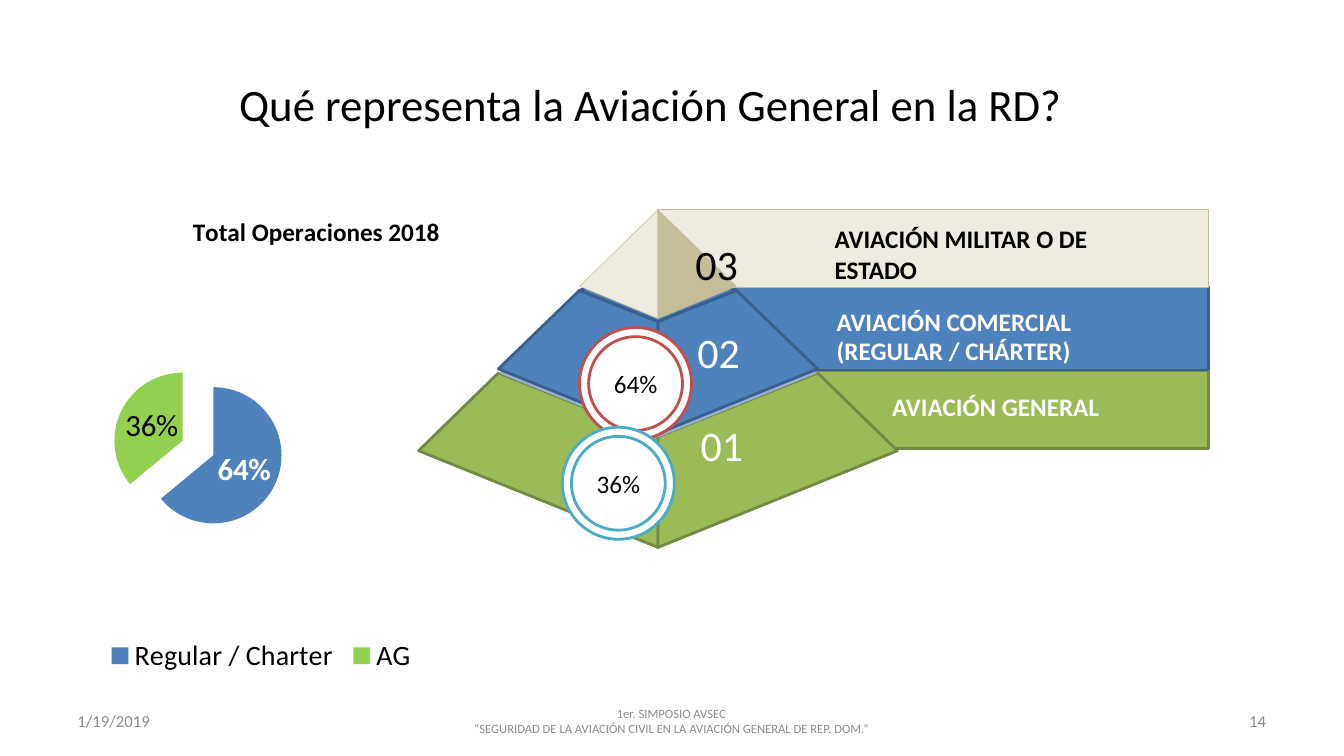
import pptx
import pptx.chart.data
import pptx.dml.color
import pptx.enum.chart
import pptx.enum.shapes
import pptx.enum.text
import pptx.oxml
import pptx.oxml.ns
import pptx.util

Pt = pptx.util.Pt
ALIGN = pptx.enum.text.PP_ALIGN
ANCHOR = pptx.enum.text.MSO_ANCHOR

# Content (lengths in points)
HEADING = "Qué representa la Aviación General en la RD?"
OPERATIONS = {"title": "Total Operaciones 2018", "series": "Series 1",
              "shares": [("Regular / Charter", 64, "blue"), ("AG", 36, "lime")]}
AXIS = 470  # vertical axis of the pyramid
# Faces and lids list (distance from the axis, y); levels run from bottom to top
LEVELS = [
    {"number": "01", "number_at": (492.5, 300.2), "ink": "white",
     "label": "AVIACIÓN GENERAL", "label_box": (622.8, 275.8, 218.9, 31), "spacing": 1,
     "banner": (469.4, 265, 393.8, 55.4), "edge": ("dark_green", 2),
     "left": "green", "right": "green",
     "face": [(171, 322), (0, 391), (0, 312), (114, 266.4)],
     "lid": (114, 266.4, 224.6, 312.5), "lid_fill": "pale_blue", "lid_edge": None},
    {"number": "02", "number_at": (490.3, 234), "ink": "white",
     "label": "AVIACIÓN COMERCIAL (REGULAR / CHÁRTER)",
     "label_box": (583.2, 216.7, 265, 51.1), "spacing": 0.95,
     "banner": (467.3, 204.5, 396, 59.8), "edge": ("dark_blue", 2),
     "left": "blue", "right": "blue",
     "face": [(56, 207.4), (114, 263.5), (0, 309.6), (0, 229.7)],
     "lid": (56, 207.4, 186.5, 229.7), "lid_fill": "blue", "lid_edge": ("dark_blue", 2)},
    {"number": "03", "number_at": (488.9, 171.4), "ink": "black",
     "label": "AVIACIÓN MILITAR O DE ESTADO",
     "label_box": (581.8, 156.2, 258.5, 53.3), "spacing": 1,
     "banner": (469.4, 149.8, 393.8, 55.4), "edge": ("sand", 0.38),
     "left": "cream", "right": "sand",
     "face": [(0, 149.8), (56, 204.5), (0, 227.5)], "lid": None},
]
BADGES = [("64%", 454, 274, "red"), ("36%", 441.7, 345.2, "aqua")]
BADGE_SIZES = (80, 67)
FOOTER = [
    (["1/19/2019"], (48.2, 500.4, 223.9, 28.8), "footer", ALIGN.LEFT),
    (["1er. SIMPOSIO AVSEC",
      "“SEGURIDAD DE LA AVIACIÓN CIVIL EN LA AVIACIÓN GENERAL DE REP. DOM.”"],
     (327.6, 500.4, 303.8, 28.8), "credit", ALIGN.CENTER),
    (["14"], (687.6, 500.4, 223.9, 28.8), "footer", ALIGN.RIGHT),
]

THEME = {
    "font": "Calibri",
    "colors": {"black": "000000", "white": "FFFFFF", "gray": "8C8C8C", "blue": "4F81BD",
               "dark_blue": "3A5F8C", "pale_blue": "95B3D7", "green": "9BBB59",
               "dark_green": "738A42", "lime": "92D050", "cream": "EEECE1",
               "sand": "C4BD97", "red": "C0504D", "aqua": "4BACC6"},
    "sizes": {"heading": 32, "number": 30, "label": 18, "badge": 18, "footer": 12,
              "credit": 9, "chart": 10, "chart_title": 18, "legend": 20, "share": 22},
}


def color(name):
    return pptx.dml.color.RGBColor.from_string(THEME["colors"][name])


def assign(target, values):
    for attribute, value in values.items():
        setattr(target, attribute, value)


def style_font(font, role, ink, bold=False):
    assign(font, {"name": THEME["font"], "size": Pt(THEME["sizes"][role]), "bold": bold})
    font.color.rgb = color(ink)


def write(frame, lines, role, ink, align=ALIGN.LEFT, bold=False, spacing=None, **frame_format):
    assign(frame, {"word_wrap": True, **frame_format})
    for index, line in enumerate(lines):
        paragraph = frame.add_paragraph() if index else frame.paragraphs[0]
        assign(paragraph, {"alignment": align, "line_spacing": spacing})
        run = paragraph.add_run()
        run.text = line
        style_font(run.font, role, ink, bold)


def paint(shape, fill, edge):
    shape.shadow.inherit = False
    shape.fill.solid()
    shape.fill.fore_color.rgb = color(fill)
    if edge:
        shape.line.color.rgb = color(edge[0])
        shape.line.width = Pt(edge[1])
    else:
        shape.line.fill.background()


def add_outline(shapes, points, fill, edge):
    start, *rest = [(Pt(x), Pt(y)) for x, y in points]
    builder = shapes.build_freeform(*start)
    builder.add_line_segments(rest, close=True)
    paint(builder.convert_to_shape(), fill, edge)


def add_text(shapes, box):
    return shapes.add_textbox(*map(Pt, box)).text_frame


def add_level(shapes, level):
    banner = shapes.add_shape(pptx.enum.shapes.MSO_SHAPE.RECTANGLE, *map(Pt, level["banner"]))
    paint(banner, level["left"], level["edge"])
    for side, fill in ((-1, level["left"]), (1, level["right"])):
        face = [(AXIS + side * reach, y) for reach, y in level["face"]]
        add_outline(shapes, face, fill, level["edge"])
    if level["lid"]:
        reach, middle, top, bottom = level["lid"]
        lid = [(AXIS - reach, middle), (AXIS, top), (AXIS + reach, middle), (AXIS, bottom)]
        add_outline(shapes, lid, level["lid_fill"], level["lid_edge"])
    write(add_text(shapes, level["label_box"]), [level["label"]], "label", level["ink"],
          bold=True, spacing=level["spacing"], margin_left=Pt(14.4), margin_right=Pt(14.4),
          margin_top=Pt(3.6), margin_bottom=Pt(5.8))
    write(add_text(shapes, (*level["number_at"], 45.4, 39.6)), [level["number"]], "number",
          level["ink"], ALIGN.RIGHT, spacing=0.89, word_wrap=False)


def place(element, index, **fractions):
    """Give a chart part a fixed place, in fractions of the chart."""
    for layout in element.findall(pptx.oxml.ns.qn("c:layout")):
        element.remove(layout)
    target = '<c:layoutTarget val="inner"/>' if index == 0 else ""
    modes = '<c:xMode val="edge"/><c:yMode val="edge"/>'
    values = "".join(f'<c:{key} val="{value}"/>' for key, value in fractions.items())
    element.insert(index, pptx.oxml.parse_xml(
        f'<c:layout {pptx.oxml.ns.nsdecls("c")}><c:manualLayout>{target}{modes}{values}'
        '</c:manualLayout></c:layout>'))


def add_operations(shapes):
    data = pptx.chart.data.CategoryChartData()
    data.categories = [name for name, _, _ in OPERATIONS["shares"]]
    data.add_series(OPERATIONS["series"], [share for _, share, _ in OPERATIONS["shares"]])
    chart = shapes.add_chart(pptx.enum.chart.XL_CHART_TYPE.PIE,
                             *map(Pt, (47.5, 131.8, 347.8, 360)), data).chart
    style_font(chart.font, "chart", "black")
    assign(chart, {"has_title": True, "has_legend": True})
    write(chart.chart_title.text_frame, [OPERATIONS["title"]], "chart_title", "black",
          ALIGN.CENTER, bold=True)
    assign(chart.legend, {"position": pptx.enum.chart.XL_LEGEND_POSITION.BOTTOM,
                          "include_in_layout": False})
    style_font(chart.legend.font, "legend", "black")

    # Slices and their percentages
    pie = chart.plots[0]
    pie.vary_by_categories = True
    shares = pie.series[0]
    shares._element.find(pptx.oxml.ns.qn("c:tx")).addnext(pptx.oxml.parse_xml(
        f'<c:explosion {pptx.oxml.ns.nsdecls("c")} val="25"/>'))
    for index, (_, _, fill) in enumerate(OPERATIONS["shares"]):
        slice_fill = shares.points[index].format.fill
        slice_fill.solid()
        slice_fill.fore_color.rgb = color(fill)
    center = pptx.enum.chart.XL_LABEL_POSITION.CENTER
    assign(shares.data_labels, {"show_percentage": True, "show_value": False,
                                "number_format": "0%", "number_format_is_linked": False,
                                "position": center})
    style_font(shares.data_labels.font, "share", "black")
    regular_label = shares.points[0].data_label
    style_font(regular_label.font, "share", "white", bold=True)
    regular_label.position = center
    for tag, shown in (("showVal", "0"), ("showPercent", "1")):
        for flag in shares._element.xpath(f"c:dLbls/c:dLbl/c:{tag}"):
            flag.set("val", shown)

    # Places of title, pie and legend
    place(chart.chart_title._element, 1, x=0.25, y=0.05)
    place(chart._chartSpace.chart.plotArea, 0, x=0.095, y=0.354, w=0.35, h=0.338)
    place(chart.legend._element, 1, x=0.07, y=0.89, w=0.66, h=0.09)


def main():
    deck = pptx.Presentation()
    assign(deck, {"slide_width": Pt(960), "slide_height": Pt(540)})
    slide = deck.slides.add_slide(deck.slide_layouts[5])
    shapes = slide.shapes

    # Heading
    assign(shapes.title, {"left": Pt(59.8), "top": Pt(41.8), "width": Pt(810), "height": Pt(64)})
    write(shapes.title.text_frame, [HEADING], "heading", "black", ALIGN.CENTER,
          vertical_anchor=ANCHOR.MIDDLE)

    # Pyramid
    for level in LEVELS:
        add_level(shapes, level)

    # Percentage badges
    for share, x, y, ring in BADGES:
        for size in BADGE_SIZES:
            badge = shapes.add_shape(pptx.enum.shapes.MSO_SHAPE.OVAL, Pt(x - size / 2),
                                     Pt(y - size / 2), Pt(size), Pt(size))
            paint(badge, "white", (ring, 2))
        write(badge.text_frame, [share], "badge", "black", ALIGN.CENTER, word_wrap=False,
              vertical_anchor=ANCHOR.MIDDLE)

    # Pie chart and footer
    add_operations(shapes)
    for lines, box, role, align in FOOTER:
        write(add_text(shapes, box), lines, role, "gray", align, vertical_anchor=ANCHOR.MIDDLE)
    deck.save("out.pptx")


if __name__ == "__main__":
    main()
